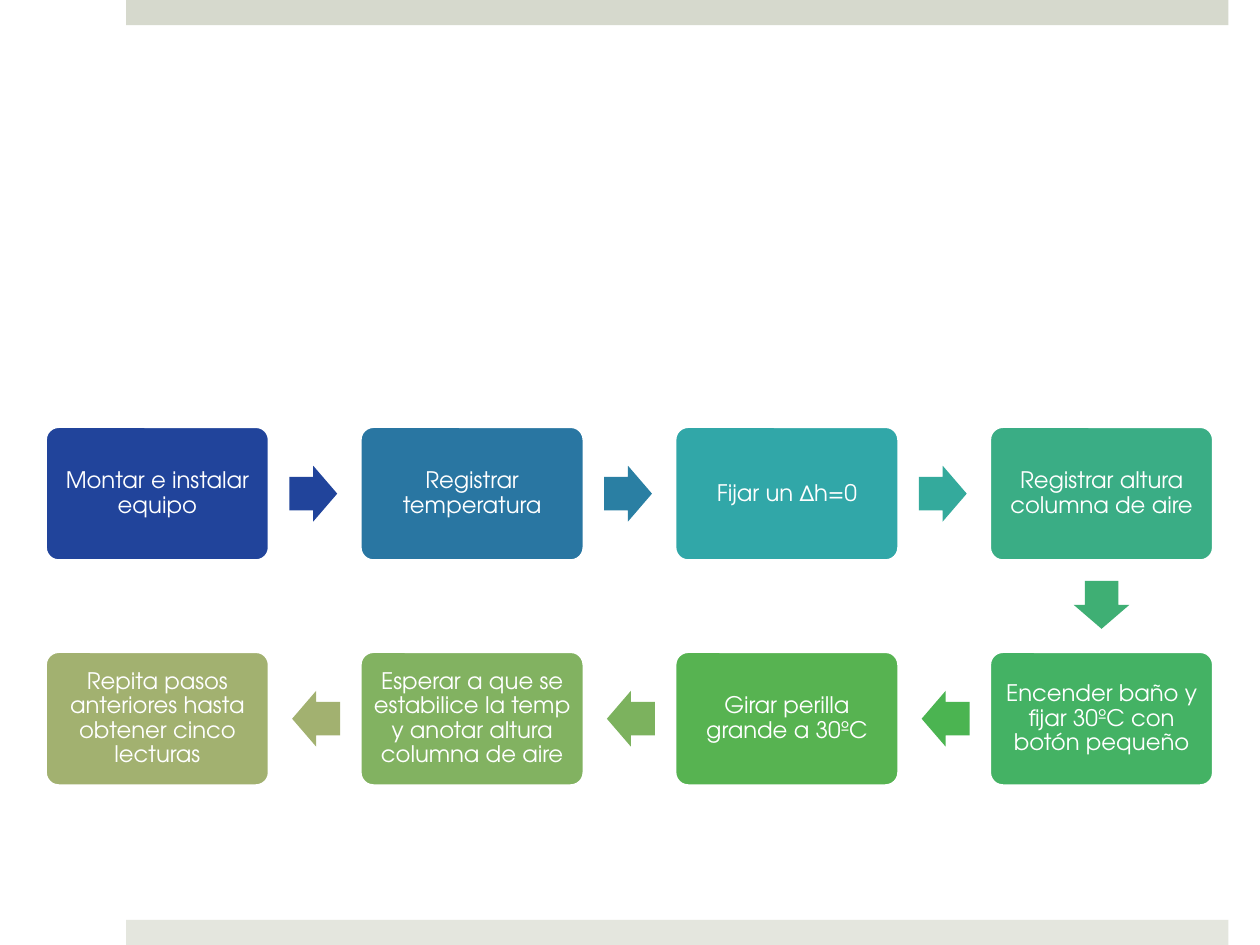
from pptx import Presentation
from pptx.dml.color import RGBColor
from pptx.enum import shapes, text
from pptx.util import Pt

WHITE = RGBColor(0xFF, 0xFF, 0xFF)
TOP_BAND = RGBColor(0xD6, 0xD9, 0xCD)
BOTTOM_BAND = RGBColor(0xE4, 0xE6, 0xDE)
NAVY = RGBColor(0x21, 0x44, 0x9B)
BLUE = RGBColor(0x29, 0x76, 0xA2)
BLUE_ARROW = RGBColor(0x2A, 0x7F, 0xA3)
TEAL = RGBColor(0x31, 0xA7, 0xA8)
TEAL_ARROW = RGBColor(0x34, 0xAA, 0x9C)
JADE = RGBColor(0x3A, 0xAD, 0x85)
JADE_ARROW = RGBColor(0x3F, 0xAF, 0x74)
EMERALD = RGBColor(0x44, 0xB2, 0x64)
EMERALD_ARROW = RGBColor(0x4B, 0xB4, 0x51)
GREEN = RGBColor(0x57, 0xB3, 0x51)
GREEN_ARROW = RGBColor(0x7C, 0xB2, 0x5E)
MOSS = RGBColor(0x82, 0xB2, 0x61)
OLIVE = RGBColor(0xA2, 0xB1, 0x70)

FONT = "TeX Gyre Adventor"
COLUMNS = 4
LEFT, TOP = 25.8, 243.6
COLUMN_STEP, ROW_STEP = 179.85, 128.6
BOX_WIDTH, BOX_HEIGHT = 128.2, 77
ARROW_LENGTH, ARROW_WIDTH = 27.4, 31.9
ARROW_GAP = 11.3

STEPS = [
    ("Montar e instalar equipo", NAVY, NAVY),
    ("Registrar temperatura", BLUE, BLUE_ARROW),
    ("Fijar un Δh=0", TEAL, TEAL_ARROW),
    ("Registrar altura columna de aire", JADE, JADE_ARROW),
    ("Encender baño y fijar 30ºC con botón pequeño", EMERALD, EMERALD_ARROW),
    ("Girar perilla grande a 30ºC", GREEN, GREEN_ARROW),
    ("Esperar a que se estabilice la temp y anotar altura columna de aire",
     MOSS, OLIVE),
    ("Repita pasos anteriores hasta obtener cinco lecturas", OLIVE, None),
]


def add_filled(page, kind, left, top, width, height, color):
    shape = page.shapes.add_shape(kind, Pt(left), Pt(top), Pt(width), Pt(height))
    shape.shadow.inherit = False
    shape.fill.solid()
    shape.fill.fore_color.rgb = color
    shape.line.fill.background()
    return shape


def write_text(shape, words, *, size, color, font=FONT, inset=3.6):
    frame = shape.text_frame
    frame.word_wrap = True
    frame.vertical_anchor = text.MSO_ANCHOR.MIDDLE
    frame.margin_left = frame.margin_right = Pt(inset)
    frame.margin_top = frame.margin_bottom = Pt(inset)
    para = frame.paragraphs[0]
    para.alignment = text.PP_ALIGN.CENTER
    para.line_spacing = 0.9
    span = para.add_run()
    span.text = words
    span.font.name = font
    span.font.size = Pt(size)
    span.font.color.rgb = color


def add_step(page, words, center_x, center_y, color):
    box = add_filled(page, shapes.MSO_SHAPE.ROUNDED_RECTANGLE,
                     center_x - BOX_WIDTH / 2, center_y - BOX_HEIGHT / 2,
                     BOX_WIDTH, BOX_HEIGHT, color)
    box.adjustments[0] = 0.1
    box.line.color.rgb = WHITE
    box.line.width = Pt(2)
    write_text(box, words, size=13, color=WHITE)


def add_arrow(page, center_x, center_y, rotation, color):
    arrow = add_filled(page, shapes.MSO_SHAPE.RIGHT_ARROW,
                       center_x - ARROW_LENGTH / 2, center_y - ARROW_WIDTH / 2,
                       ARROW_LENGTH, ARROW_WIDTH, color)
    arrow.adjustments[0] = 0.6
    arrow.adjustments[1] = 0.5
    arrow.rotation = rotation


def step_center(index):
    row, place = divmod(index, COLUMNS)
    column = COLUMNS - 1 - place if row % 2 else place
    return (LEFT + column * COLUMN_STEP + BOX_WIDTH / 2,
            TOP + row * ROW_STEP + BOX_HEIGHT / 2)


def add_flow(page):
    reach = ARROW_GAP + ARROW_LENGTH / 2
    for index, (words, color, arrow_color) in enumerate(STEPS):
        x, y = step_center(index)
        add_step(page, words, x, y, color)
        if arrow_color is None:
            continue
        next_x, next_y = step_center(index + 1)
        if next_y > y:
            add_arrow(page, x, y + BOX_HEIGHT / 2 + reach, 90, arrow_color)
        elif next_x > x:
            add_arrow(page, x + BOX_WIDTH / 2 + reach, y, 0, arrow_color)
        else:
            add_arrow(page, x - BOX_WIDTH / 2 - reach, y, 180, arrow_color)


def main():
    deck = Presentation()
    deck.slide_width, deck.slide_height = Pt(720), Pt(540)
    page = deck.slides.add_slide(deck.slide_layouts[6])
    for top, color in ((0, TOP_BAND), (525.6, BOTTOM_BAND)):
        add_filled(page, shapes.MSO_SHAPE.RECTANGLE, 72, top, 630, 14.4, color)
    add_flow(page)
    deck.save("out.pptx")


if __name__ == "__main__":
    main()
